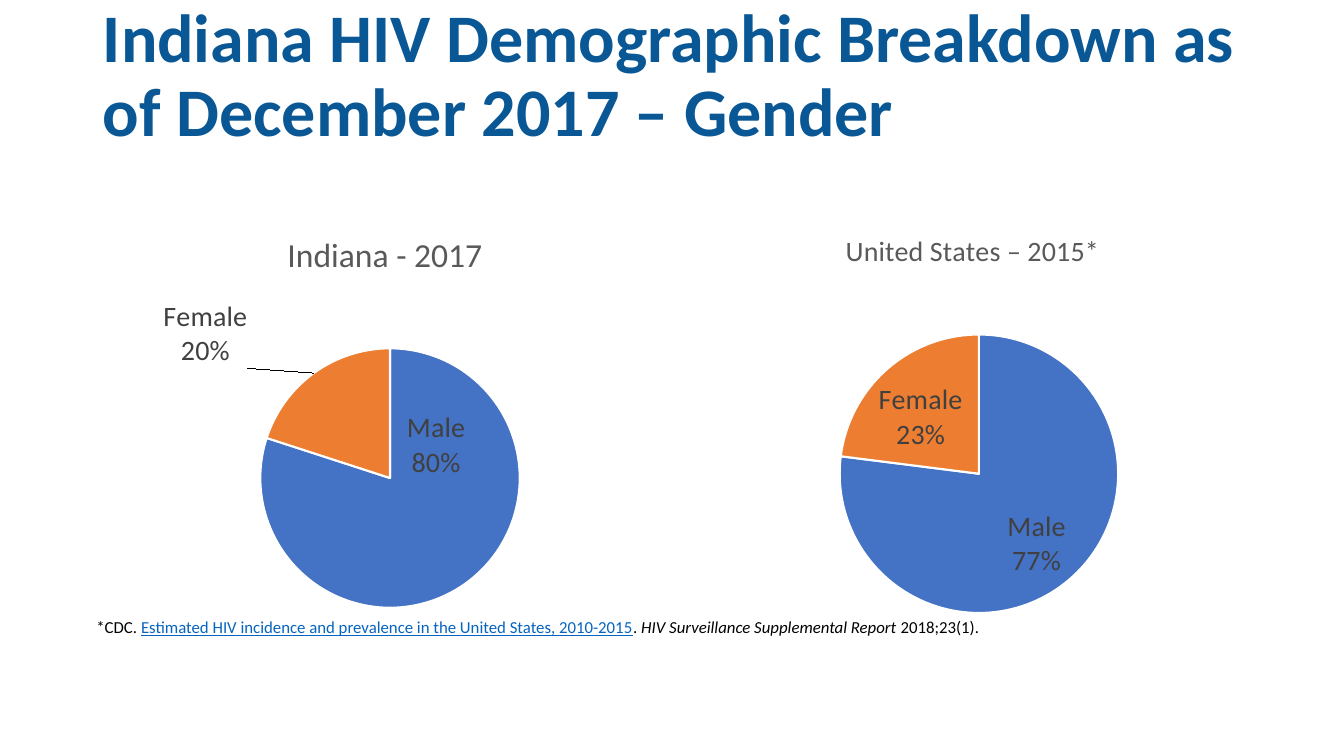
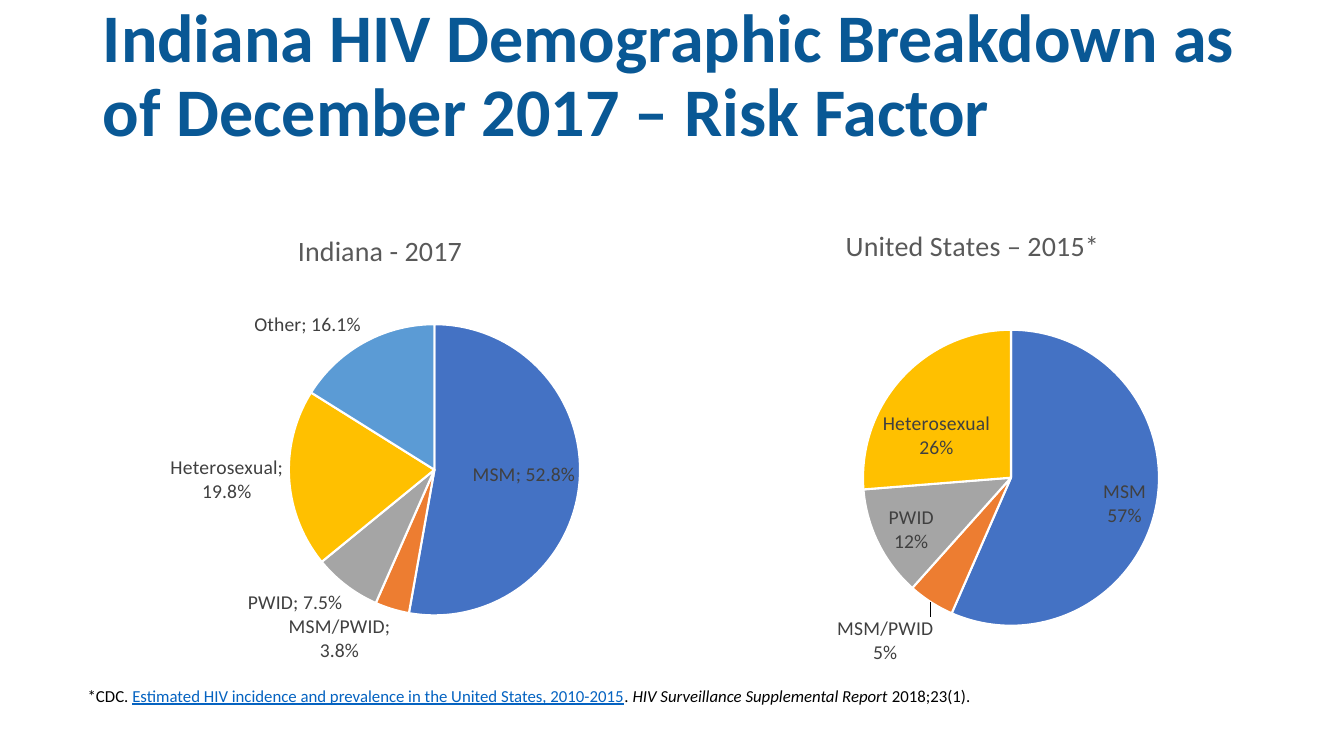
"""Build two slides that compare HIV demographics in Indiana and the United States."""
from lxml.etree import SubElement
from pptx import Presentation
from pptx.chart.data import CategoryChartData
from pptx.dml.color import RGBColor
from pptx.enum.chart import XL_CHART_TYPE as ChartType, XL_LABEL_POSITION as LabelPos
from pptx.enum.text import MSO_ANCHOR as Anchor, MSO_AUTO_SIZE as AutoSize, PP_ALIGN as Align
from pptx.oxml import parse_xml
from pptx.oxml.ns import qn
from pptx.util import Cm, Pt

FONT = "Calibri"
NAVY, BLACK, LINK, GREY, DARK, WHITE = "095895", "000000", "0563C1", "595959", "404040", "FFFFFF"
SLICE_COLORS = ["4472C4", "ED7D31", "A5A5A5", "FFC000", "5B9BD5"]
CHART_LEFTS, CHART_TOP, CHART_W, CHART_H = (2.34, 17.15), 5.08, 14.4, 12.09

HEADING = "Indiana HIV Demographic Breakdown as of December 2017 – "
CITATION = [
    ("*CDC. ", BLACK, False, False),
    ("Estimated HIV incidence and prevalence in the United States, 2010-2015", LINK, True, False),
    (". ", BLACK, False, False),
    ("HIV Surveillance Supplemental Report ", BLACK, False, True),
    ("2018;23(1).", BLACK, False, False),
]
GENDERS = ["Male", "Female"]
RISKS = ["MSM", "MSM/PWID", "PWID", "Heterosexual", "Other"]
INDIANA, NATION = "Indiana - 2017", "United States – 2015*"

SLIDES = [
    dict(topic="Gender", categories=GENDERS, label_size=20, note_at=(2.18, 15.42), pies=[
        dict(title=INDIANA, title_size=24, title_at=(0.33, 0.05), values=[80, 20],
             center=(7.49, 6.97), radius=3.27, moved={0: (-0.11, -0.37), 1: (-0.11, 0)}),
        dict(title=NATION, title_size=20, title_at=(0.28, 0.05), values=[77, 23],
             center=(7.52, 6.86), radius=3.51, moved={}),
    ]),
    dict(topic="Risk Factor", categories=RISKS, label_size=14, note_at=(1.96, 17.15), pies=[
        dict(title=INDIANA, title_size=20, title_at=(0.35, 0.05),
             values=[0.528, 0.038, 0.075, 0.198, 0.161], value_format="0.0%",
             center=(8.61, 6.76), radius=3.67, moved={}),
        dict(title=NATION, title_size=20, title_at=(0.28, 0.04), values=[56, 5, 12, 26, 0],
             center=(8.33, 6.96), radius=3.73, moved={1: (0.01, 0.02), 4: (-0.1, 0.01)}),
    ]),
]


def color(hex_code):
    """Turn a hex string into a colour."""
    return RGBColor.from_string(hex_code)


def style(font, size, hex_code, bold=False, italic=False, underline=False):
    """Apply the deck's font with a size, colour and emphasis."""
    font.name, font.size = FONT, Pt(size)
    font.bold, font.italic, font.underline = bold, italic, underline
    font.color.rgb = color(hex_code)


def set_layout(parent, index, **fractions):
    """Give a chart part a manual layout in fractions of the chart."""
    for old in parent.findall(qn("c:layout")):
        parent.remove(old)
    layout = parent.makeelement(qn("c:layout"))
    manual = SubElement(layout, qn("c:manualLayout"))
    for name, value in fractions.items():
        SubElement(manual, qn(f"c:{name}")).set("val", value if isinstance(value, str) else f"{value:.4f}")
    parent.insert(index, layout)


def add_title(slide, topic):
    """Place and format the slide title."""
    title = slide.shapes.title
    title.left, title.top, title.width, title.height = Cm(2.34), Cm(0.79), Cm(29.21), Cm(2.31)
    frame = title.text_frame
    frame.text = HEADING + topic
    frame.word_wrap, frame.auto_size, frame.vertical_anchor = True, AutoSize.NONE, Anchor.MIDDLE
    paragraph = frame.paragraphs[0]
    paragraph.alignment, paragraph.line_spacing = Align.LEFT, 0.9
    style(paragraph.runs[0].font, 48.6, NAVY, bold=True)


def add_labels(series, pie, size):
    """Label each slice with its category and share."""
    labels = series.data_labels
    by_value = "value_format" in pie
    labels.show_category_name = True
    labels.show_value, labels.show_percentage = by_value, not by_value
    labels.number_format = pie.get("value_format", "0%")
    labels.number_format_is_linked = False
    labels.position = LabelPos.BEST_FIT
    style(labels.font, size, DARK)
    shown = {"LegendKey": 0, "Val": int(by_value), "CatName": 1, "SerName": 0,
             "Percent": int(not by_value), "BubbleSize": 0}
    flags = "".join(f'<c:show{name} val="{flag}"/>' for name, flag in shown.items())
    for place, (index, (dx, dy)) in enumerate(pie["moved"].items()):
        label = parse_xml(
            '<c:dLbl xmlns:c="http://schemas.openxmlformats.org/drawingml/2006/chart">'
            f'<c:idx val="{index}"/><c:dLblPos val="bestFit"/>{flags}</c:dLbl>')
        set_layout(label, 1, x=dx, y=dy)
        labels._element.insert(place, label)
        style(series.points[index].data_label.font, size, DARK)


def add_pie(slide, left, categories, pie, label_size):
    """Add one pie chart with its title, slice colours and labels."""
    data = CategoryChartData()
    data.categories = categories
    data.add_series("Series 1", pie["values"])
    chart = slide.shapes.add_chart(
        ChartType.PIE, Cm(left), Cm(CHART_TOP), Cm(CHART_W), Cm(CHART_H), data).chart
    chart.has_legend = False
    style(chart.font, label_size, BLACK)

    heading = chart.chart_title
    heading.text_frame.text = pie["title"]
    heading.include_in_layout = False
    style(heading.text_frame.paragraphs[0].runs[0].font, pie["title_size"], GREY)
    title_x, title_y = pie["title_at"]
    set_layout(heading._element, 1, xMode="edge", yMode="edge", x=title_x, y=title_y)

    (center_x, center_y), radius = pie["center"], pie["radius"]
    plot_area = chart._chartSpace.find(".//" + qn("c:plotArea"))
    set_layout(plot_area, 0, layoutTarget="inner", xMode="edge", yMode="edge",
               x=(center_x - radius) / CHART_W, y=(center_y - radius) / CHART_H,
               w=2 * radius / CHART_W, h=2 * radius / CHART_H)

    plot = chart.plots[0]
    plot.vary_by_categories = True
    series = plot.series[0]
    for index, hex_code in enumerate(SLICE_COLORS[:len(categories)]):
        slice_format = series.points[index].format
        slice_format.fill.solid()
        slice_format.fill.fore_color.rgb = color(hex_code)
        slice_format.line.color.rgb = color(WHITE)
        slice_format.line.width = Pt(1.5)
    add_labels(series, pie, label_size)


def add_citation(slide, left, top):
    """Write the source note below the charts."""
    frame = slide.shapes.add_textbox(Cm(left), Cm(top), Cm(29.51), Cm(0.76)).text_frame
    frame.word_wrap, frame.auto_size = True, AutoSize.SHAPE_TO_FIT_TEXT
    for text, hex_code, underline, italic in CITATION:
        run = frame.paragraphs[0].add_run()
        run.text = text
        style(run.font, 12, hex_code, italic=italic, underline=underline)


def main():
    """Build the deck and save it."""
    deck = Presentation()
    deck.slide_width, deck.slide_height = Cm(33.87), Cm(19.05)
    title_only = deck.slide_layouts[5]
    for content in SLIDES:
        slide = deck.slides.add_slide(title_only)
        add_title(slide, content["topic"])
        for left, pie in zip(CHART_LEFTS, content["pies"]):
            add_pie(slide, left, content["categories"], pie, content["label_size"])
        add_citation(slide, *content["note_at"])
    deck.save("out.pptx")


if __name__ == "__main__":
    main()
